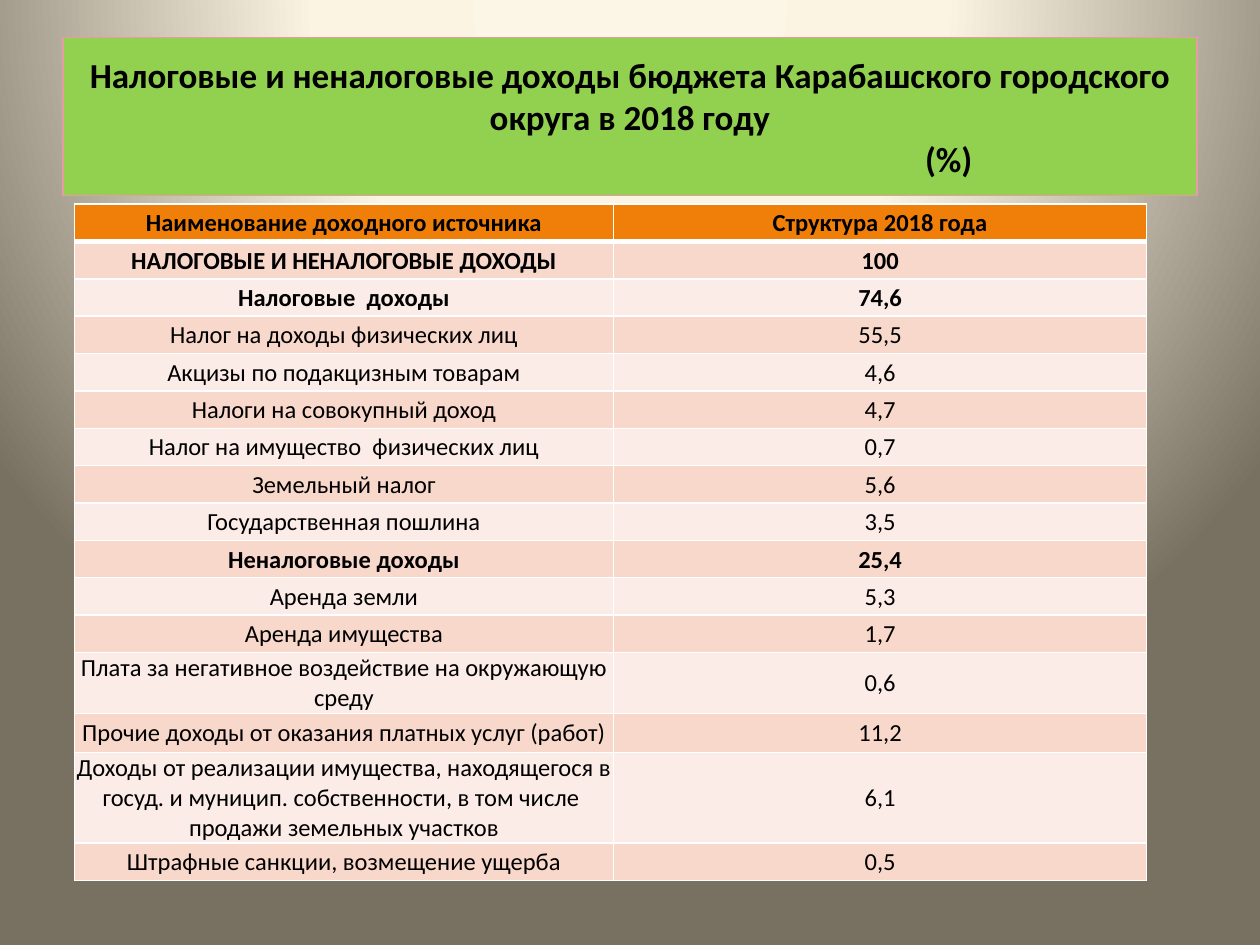
from pptx import Presentation
from pptx.dml.color import RGBColor
from pptx.enum.shapes import MSO_SHAPE as Shape
from pptx.enum.text import MSO_ANCHOR as Anchor, PP_ALIGN as Align
from pptx.oxml import parse_xml
from pptx.oxml.ns import nsdecls, qn
from pptx.util import Inches, Pt

FONT = "Calibri"
TITLE = "Налоговые и неналоговые доходы бюджета Карабашского городского округа в 2018 году"
HEADER = ("Наименование доходного источника", "Структура 2018 года")
INCOME = [
    ("НАЛОГОВЫЕ И НЕНАЛОГОВЫЕ ДОХОДЫ", "100"),
    ("Налоговые  доходы", "74,6"),
    ("Налог на доходы физических лиц", "55,5"),
    ("Акцизы по подакцизным товарам", "4,6"),
    ("Налоги на совокупный доход", "4,7"),
    ("Налог на имущество  физических лиц", "0,7"),
    ("Земельный налог", "5,6"),
    ("Государственная пошлина", "3,5"),
    ("Неналоговые доходы", "25,4"),
    ("Аренда земли", "5,3"),
    ("Аренда имущества", "1,7"),
    ("Плата за негативное воздействие на окружающую среду", "0,6"),
    ("Прочие доходы от оказания платных услуг (работ)", "11,2"),
    ("Доходы от реализации имущества, находящегося в госуд. и муницип. "
     "собственности, в том числе  продажи земельных участков", "6,1"),
    ("Штрафные санкции, возмещение ущерба", "0,5"),
]
TOTAL_ROWS = {0, 1, 2, 9}
COLUMN_WIDTHS = (4.28, 4.23)
ROW_HEIGHT = 3.56 / 12
TALL_ROWS = {12: 0.48, 13: 0.31, 14: 0.71}


def color(value):
    """Turn a hex string into a colour."""
    return RGBColor.from_string(value)


def write(para, text, size=14, bold=False, ink="000000", align=Align.CENTER):
    """Put formatted text into a paragraph."""
    para.alignment = align
    span = para.add_run()
    span.text = text
    span.font.name = FONT
    span.font.size = Pt(size)
    span.font.bold = bold
    span.font.color.rgb = color(ink)


def paint_background(page):
    """Fill the page with a glow centred above its top edge."""
    page.background.fill.gradient()
    stops = ((0, "FCF6E6"), (40, "FBF4E2"), (100, "787161"))
    marks = "".join(
        f'<a:gs pos="{place * 1000}"><a:srgbClr val="{tone}"/></a:gs>' for place, tone in stops)
    glow = parse_xml(
        f'<a:gradFill {nsdecls("a")} rotWithShape="1"><a:gsLst>{marks}</a:gsLst>'
        '<a:path path="circle"><a:fillToRect l="50000" t="-80000" r="50000" b="180000"/>'
        '</a:path></a:gradFill>')
    properties = page.element.find(".//" + qn("p:bgPr"))
    properties.replace(properties.find(qn("a:gradFill")), glow)


def add_title(page, left, top, width, height):
    """Draw the green title band with its unit."""
    box = page.shapes.add_shape(
        Shape.RECTANGLE, Inches(left), Inches(top), Inches(width), Inches(height))
    box.shadow.inherit = False
    box.fill.solid()
    box.fill.fore_color.rgb = color("92D050")
    box.line.color.rgb = color("E69CA4")
    box.line.width = Pt(0.75)
    frame = box.text_frame
    frame.word_wrap = True
    frame.vertical_anchor = Anchor.MIDDLE
    write(frame.paragraphs[0], TITLE, size=20, bold=True)
    unit = frame.add_paragraph()
    write(unit, "(%)", size=20, bold=True)
    unit._p.get_or_add_pPr().set("marL", str(Inches(5.06)))


def set_borders(cell, bottom=1):
    """Give a cell white borders, placed before its fill."""
    properties = cell._tc.get_or_add_tcPr()
    for place, (side, points) in enumerate((("L", 1), ("R", 1), ("T", 1), ("B", bottom))):
        properties.insert(place, parse_xml(
            f'<a:ln{side} {nsdecls("a")} w="{Pt(points)}"><a:solidFill>'
            f'<a:srgbClr val="FFFFFF"/></a:solidFill></a:ln{side}>'))


def add_income_table(page, left, top, width, height):
    """Draw the table of income sources and their shares."""
    rows = [HEADER, *INCOME]
    table = page.shapes.add_table(
        len(rows), len(HEADER), Inches(left), Inches(top), Inches(width), Inches(height)).table
    for column, size in zip(table.columns, COLUMN_WIDTHS):
        column.width = Inches(size)
    for number, texts in enumerate(rows):
        table.rows[number].height = Inches(TALL_ROWS.get(number, ROW_HEIGHT))
        band = "F07F09" if number == 0 else ("FCECE7", "F9D8CC")[number % 2]
        for cell, text in zip(table.rows[number].cells, texts):
            cell.margin_left = cell.margin_right = cell.margin_top = Inches(0.01)
            cell.margin_bottom = 0
            cell.vertical_anchor = Anchor.MIDDLE
            cell.fill.solid()
            cell.fill.fore_color.rgb = color(band)
            set_borders(cell, bottom=3 if number == 0 else 1)
            write(cell.text_frame.paragraphs[0], text, bold=number in TOTAL_ROWS)


def main():
    """Build and save the deck."""
    deck = Presentation()
    deck.slide_width, deck.slide_height = Inches(10), Inches(7.5)
    page = deck.slides.add_slide(deck.slide_layouts[6])
    paint_background(page)
    add_title(page, 0.5, 0.3, 9, 1.25)
    add_income_table(page, 0.59, 1.62, sum(COLUMN_WIDTHS), 5.34)
    deck.save("out.pptx")


if __name__ == "__main__":
    main()
